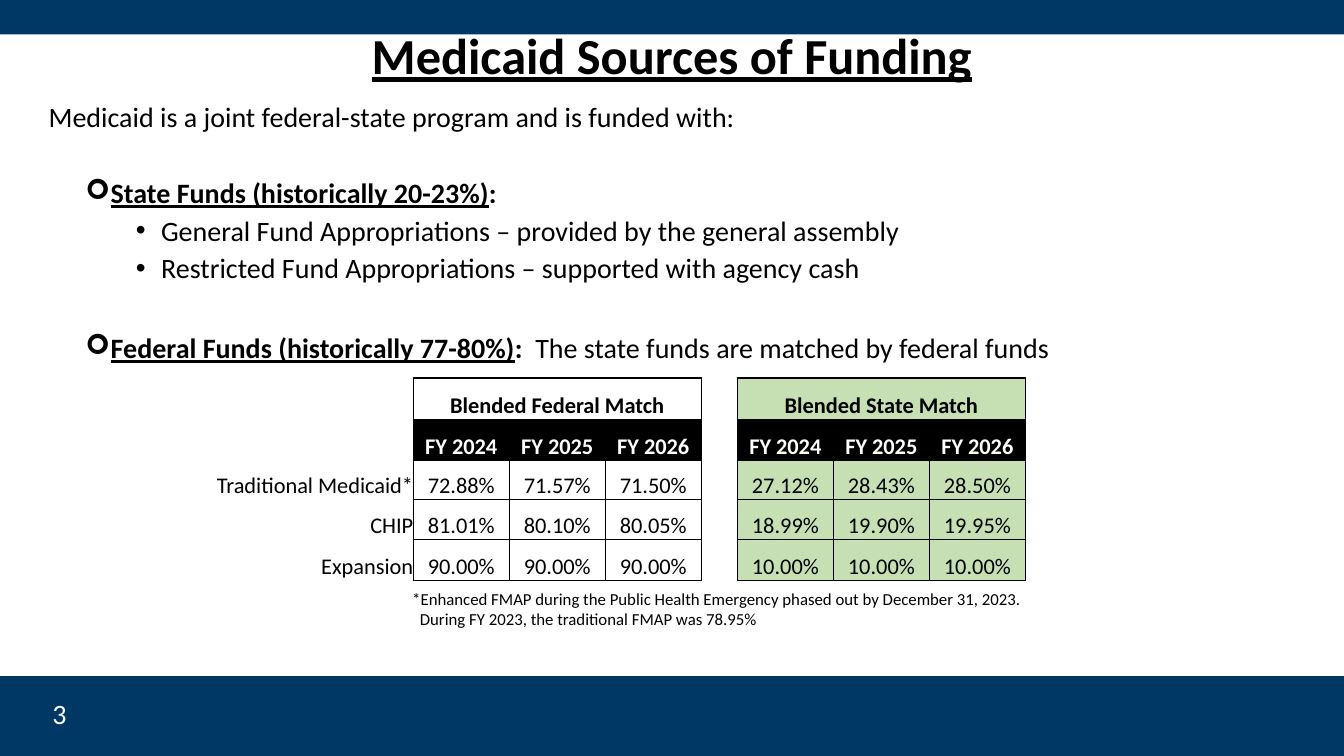
import pptx
import pptx.util
import pptx.dml.color
import pptx.enum.shapes
import pptx.enum.text
import pptx.oxml.ns
from lxml import etree

Align = pptx.enum.text.PP_ALIGN
Anchor = pptx.enum.text.MSO_ANCHOR
Pt = pptx.util.Pt
qn = pptx.oxml.ns.qn
COLORS = {"navy": "003865", "white": "FFFFFF", "black": "000000", "green": "C6E0B4"}
RGB = {name: pptx.dml.color.RGBColor.from_string(code) for name, code in COLORS.items()}

# The grid has 160 columns and 90 rows, each a twelfth of an inch.
COLS, ROWS = 160, 90
UNIT = pptx.util.Inches(1) / 12

deck = pptx.Presentation()
deck.slide_width, deck.slide_height = round(COLS * UNIT), round(ROWS * UNIT)
slide = deck.slides.add_slide(deck.slide_layouts[6])


def style(para, size, color="black", bold=False, line=False):
    for run in para.runs:
        font = run.font
        font.name, font.size, font.bold, font.underline = "Calibri", Pt(size), bold, line
        font.color.rgb = RGB[color]


def add_text(place, lines, size, color="black", align=Align.LEFT, anchor=Anchor.TOP):
    """Add a text box at a grid place, one paragraph a line; return its paragraphs."""
    frame = slide.shapes.add_textbox(*(round(n * UNIT) for n in place)).text_frame
    frame.word_wrap = True
    frame.vertical_anchor = anchor
    frame.text = "\n".join(lines)
    for para in frame.paragraphs:
        para.alignment = align
        style(para, size, color)
    return frame.paragraphs


# Bars
for top, height in ((0, 4.1), (80.5, 9.5)):
    bar = slide.shapes.add_shape(
        pptx.enum.shapes.MSO_SHAPE.RECTANGLE,
        0, round(top * UNIT), deck.slide_width, round(height * UNIT))
    bar.shadow.inherit = False
    bar.fill.solid()
    bar.fill.fore_color.rgb = RGB["navy"]
    bar.line.fill.background()

# Title, page number and opening line
title = add_text((25.9, 3.1, 108.2, 7.6), ["Medicaid Sources of Funding"], 36,
                 align=Align.CENTER, anchor=Anchor.MIDDLE)[0]
title.line_spacing = 0.9
style(title, 36, bold=True, line=True)
add_text((3.1, 83.4, 6, 3.1), ["3"], 20, "white", Align.RIGHT, Anchor.MIDDLE)
add_text((4.6, 11.3, 142.9, 8.9),
         ["Medicaid is a joint federal-state program and is funded with:"], 20)

# Funding list: level, space before, heading, rest
funds = [
    (0, 0, "State Funds (historically 20-23%)", ""),
    (1, 5, "", "General Fund Appropriations – provided by the general assembly"),
    (1, 5, "", "Restricted Fund Appropriations – supported with agency cash"),
    (0, 36, "Federal Funds (historically 77-80%)", "  The state funds are matched by federal funds"),
]
paras = add_text((9, 20.8, 140.6, 62.8), [head or rest for _, _, head, rest in funds], 20)
for para, (level, space, head, rest) in zip(paras, funds):
    props = para._p.get_or_add_pPr()
    props.set("marL", str(round((3 + 6 * level) * UNIT)))
    props.set("indent", str(round(-3 * UNIT)))
    etree.SubElement(props, qn("a:buFont")).set("typeface", ("Wingdings", "Arial")[level])
    etree.SubElement(props, qn("a:buChar")).set("char", "➢•"[level])
    para.level = level
    para.line_spacing = 0.9
    para.space_before = Pt(space)
    if head:
        para.add_run().text = ":"
        if rest:
            para.add_run().text = rest
        style(para, 20)
        for run in para.runs[:2]:
            run.font.bold = True
        para.runs[0].font.underline = True

# Match rates
years = ["FY 2024", "FY 2025", "FY 2026"]
rates = [
    ["", "Blended Federal Match", "", "", "", "Blended State Match", "", ""],
    ["", *years, "", *years],
    ["Traditional Medicaid*", "72.88%", "71.57%", "71.50%", "", "27.12%", "28.43%", "28.50%"],
    ["CHIP", "81.01%", "80.10%", "80.05%", "", "18.99%", "19.90%", "19.95%"],
    ["Expansion", "90.00%", "90.00%", "90.00%", "", "10.00%", "10.00%", "10.00%"],
]
widths = [27.2] + [11.43] * 3 + [4.3] + [11.43] * 3
heights = [4.9, 4.9, 4.7, 4.7, 4.9]
LABEL, GAP, LAST = 0, 4, len(rates) - 1
table = slide.shapes.add_table(
    len(heights), len(widths),
    *(round(n * UNIT) for n in (22, 45, sum(widths), sum(heights)))).table
table.first_row = table.horz_banding = False
for col, width in zip(table.columns, widths):
    col.width = round(width * UNIT)
for row, height in zip(table.rows, heights):
    row.height = round(height * UNIT)
for left in (LABEL + 1, GAP + 1):
    table.cell(0, left).merge(table.cell(0, left + 2))

for r, line in enumerate(rates):
    for c, text in enumerate(line):
        cell = table.cell(r, c)
        cell.margin_left = cell.margin_right = cell.margin_top = cell.margin_bottom = 0
        cell.vertical_anchor = Anchor.BOTTOM
        if c in (LABEL, GAP):
            edges = {"L": int(c == GAP), "R": int(c == GAP or r > LAST), "T": 0, "B": 0}
            if c == LABEL:
                edges["R"] = 1
        else:
            edges = {"L": 1 if r == 0 or c in (LABEL + 1, GAP + 1) else 0.5,
                     "R": 1 if r == 0 or c in (GAP - 1, GAP + 3) else 0.5,
                     "T": 1 if r <= 2 else 0.5,
                     "B": 1 if r in (0, 1, LAST) else 0.5}
        for side, weight in edges.items():
            edge = etree.SubElement(cell._tc.get_or_add_tcPr(), qn("a:ln" + side))
            edge.set("w", str(Pt(weight)))
            if weight:
                fill = etree.SubElement(edge, qn("a:solidFill"))
                etree.SubElement(fill, qn("a:srgbClr")).set("val", COLORS["black"])
            else:
                etree.SubElement(edge, qn("a:noFill"))
        if c in (LABEL, GAP):
            color = "white"
        elif r == 1:
            color = "black"
        else:
            color = "green" if c > GAP else "white"
        cell.fill.solid()
        cell.fill.fore_color.rgb = RGB[color]
        if text:
            cell.text_frame.text = text
            para = cell.text_frame.paragraphs[0]
            para.alignment = Align.RIGHT if c == LABEL else Align.CENTER
            style(para, 16, "white" if r == 1 else "black", bold=r < 2)

# Footnote
note = add_text((47.9, 69.5, 77.5, 6), [
    "*Enhanced FMAP during the Public Health Emergency phased out by December 31, 2023.",
    "During FY 2023, the traditional FMAP was 78.95%"], 12)
note[1]._p.get_or_add_pPr().set("marL", str(round(0.9 * UNIT)))

deck.save("out.pptx")
